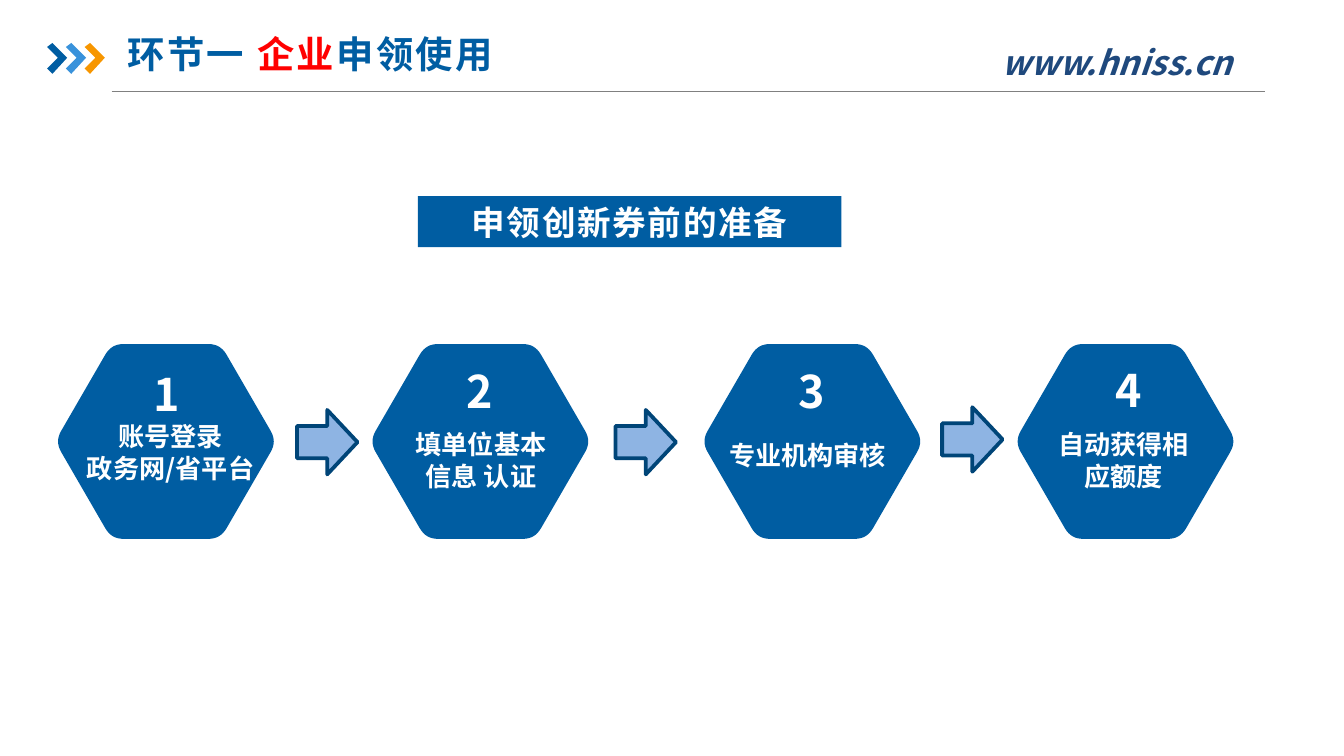
from dataclasses import dataclass

import lxml.etree
import pptx
import pptx.dml.color
import pptx.enum.shapes
import pptx.enum.text
import pptx.oxml.ns
import pptx.util
from pptx.util import Inches

BLUE, WHITE, RED = "005DA2", "FFFFFF", "FF0000"
FONT = "Noto Sans CJK SC"
CENTER = pptx.enum.text.PP_ALIGN.CENTER
LEFT = pptx.enum.text.PP_ALIGN.LEFT
HEX_TOP, HEX_HEIGHT = 2.56, 1.45
CORNER_CUT = 0.09


@dataclass
class Step:
    number: str
    lines: list[str]
    hexagon_left: float
    number_box: tuple
    label_box: tuple


STEPS = [
    Step("1", ["账号登录", "政务网/省平台"], 0.43, (1.01, 2.73, 0.46, 0.4), (0.5, 3.13, 1.54, 0.47)),
    Step("2", ["填单位基本信息 认证"], 2.77, (3.34, 2.71, 0.46, 0.4), (3.05, 3.19, 1.06, 0.47)),
    Step("3", ["专业机构审核"], 5.24, (5.81, 2.71, 0.46, 0.4), (5.39, 3.27, 1.24, 0.24)),
    Step("4", ["自动获得相应额度"], 7.57, (8.17, 2.7, 0.46, 0.4), (7.83, 3.19, 1.06, 0.47)),
]
ARROWS = [(2.21, 3.05), (4.58, 3.05), (7.01, 3.03)]
CHEVRONS = [(0.35, BLUE), (0.49, "3992DB"), (0.63, "F79600")]


def set_color(color_format, value: str) -> None:
    color_format.rgb = pptx.dml.color.RGBColor.from_string(value)


def paint(shape, fill: str, line: str | None = None, width: float = 0) -> None:
    shape.shadow.inherit = False
    shape.fill.solid()
    set_color(shape.fill.fore_color, fill)
    if line is None:
        shape.line.fill.background()
    else:
        set_color(shape.line.color, line)
        shape.line.width = pptx.util.Pt(width)


def write(shape, paragraphs: list, *, size: float, color: str = WHITE, font: str = FONT,
          italic: bool = False, spacing: float = 0, align=CENTER,
          insets: tuple = (0, 0), middle: bool = False, grow: bool = False) -> None:
    """Fill a shape with paragraphs, each a list of (text, color or None) runs."""
    frame = shape.text_frame
    frame.word_wrap = True
    frame.margin_left = frame.margin_right = Inches(insets[0])
    frame.margin_top = frame.margin_bottom = Inches(insets[1])
    anchor = pptx.enum.text.MSO_ANCHOR
    frame.vertical_anchor = anchor.MIDDLE if middle else anchor.TOP
    if grow:
        frame.auto_size = pptx.enum.text.MSO_AUTO_SIZE.SHAPE_TO_FIT_TEXT
    for index, runs in enumerate(paragraphs):
        paragraph = frame.paragraphs[0] if index == 0 else frame.add_paragraph()
        paragraph.alignment = align
        for text, run_color in runs:
            run = paragraph.add_run()
            run.text = text
            run.font.size = pptx.util.Pt(size)
            run.font.bold = True
            run.font.italic = italic
            run.font.name = font
            set_color(run.font.color, run_color or color)
            properties = run.font._element
            east_asian = lxml.etree.SubElement(properties, pptx.oxml.ns.qn("a:ea"))
            east_asian.set("typeface", FONT)
            if spacing:
                properties.set("spc", str(round(spacing * 100)))


def add_text(slide, box: tuple, paragraphs: list, **text_format) -> None:
    write(slide.shapes.add_textbox(*map(Inches, box)), paragraphs, **text_format)


def add_polygon(slide, points: list[tuple], fill: str) -> None:
    corners = [(Inches(x), Inches(y)) for x, y in points]
    builder = slide.shapes.build_freeform(*corners[0], scale=1.0)
    builder.add_line_segments(corners[1:], close=True)
    paint(builder.convert_to_shape(), fill)


def round_corners(vertices: list[tuple], cut: float, steps: int = 8) -> list[tuple]:
    """Replace each vertex by a quadratic curve that starts and ends cut away from it."""
    def toward(start: tuple, end: tuple) -> tuple:
        ratio = cut / ((end[0] - start[0]) ** 2 + (end[1] - start[1]) ** 2) ** 0.5
        return tuple(a + (b - a) * ratio for a, b in zip(start, end))

    points = []
    for index, vertex in enumerate(vertices):
        first = toward(vertex, vertices[index - 1])
        last = toward(vertex, vertices[(index + 1) % len(vertices)])
        for step in range(steps + 1):
            t = step / steps
            points.append(tuple((1 - t) ** 2 * a + 2 * t * (1 - t) * b + t ** 2 * c
                                for a, b, c in zip(first, vertex, last)))
    return points


def add_header(slide) -> None:
    rule = slide.shapes.add_connector(pptx.enum.shapes.MSO_CONNECTOR.STRAIGHT,
                                      Inches(0.83), Inches(0.68), Inches(9.41), Inches(0.68))
    set_color(rule.line.color, "808080")
    rule.line.width = pptx.util.Pt(0.75)
    lxml.etree.SubElement(rule._element.spPr, pptx.oxml.ns.qn("a:effectLst"))

    outline = [(0, 0.35), (0.04, 0.32), (0.15, 0.43), (0.04, 0.55), (0, 0.51), (0.08, 0.43)]
    for left, color in CHEVRONS:
        add_polygon(slide, [(left + x, y) for x, y in outline], color)

    add_text(slide, (7.13, 0.26, 2.36, 0.4), [[("www.hniss.cn", None)]], size=18,
             color="1F497D", italic=True, insets=(0.1, 0.05), grow=True)
    add_text(slide, (0.9, 0.21, 4.25, 0.5),
             [[("环节一 ", None), ("企业", RED), ("申领使用", None)]],
             size=20, color=BLUE, spacing=1.2, align=LEFT, insets=(0.05, 0.02))


def add_step(slide, step: Step) -> None:
    middle = HEX_HEIGHT / 2
    vertices = [(-0.02, middle), (0.4, 0), (1.21, 0),
                (1.63, middle), (1.21, HEX_HEIGHT), (0.4, HEX_HEIGHT)]
    add_polygon(slide, [(step.hexagon_left + x, HEX_TOP + y)
                        for x, y in round_corners(vertices, CORNER_CUT)], BLUE)
    add_text(slide, step.label_box, [[(line, None)] for line in step.lines], size=14, grow=True)
    add_text(slide, step.number_box, [[(step.number, None)]], size=24, grow=True)


def main() -> None:
    presentation = pptx.Presentation()
    presentation.slide_width = Inches(10)
    presentation.slide_height = Inches(10 * 9 / 16)
    slide = presentation.slides.add_slide(presentation.slide_layouts[6])
    shape_type = pptx.enum.shapes.MSO_SHAPE

    add_header(slide)

    # Banner
    banner = slide.shapes.add_shape(shape_type.RECTANGLE, *map(Inches, (3.11, 1.46, 3.15, 0.38)))
    paint(banner, BLUE)
    write(banner, [[("申领创新券前的准备", None)]], size=18, font="Arial", spacing=0.9,
          insets=(0.07, 0.04), middle=True)

    # Process steps and the arrows between them
    for step in STEPS:
        add_step(slide, step)
    for left, top in ARROWS:
        arrow = slide.shapes.add_shape(shape_type.RIGHT_ARROW,
                                       *map(Inches, (left, top, 0.45, 0.48)))
        paint(arrow, "8EB4E3", "004578", 2)

    presentation.save("out.pptx")


if __name__ == "__main__":
    main()
